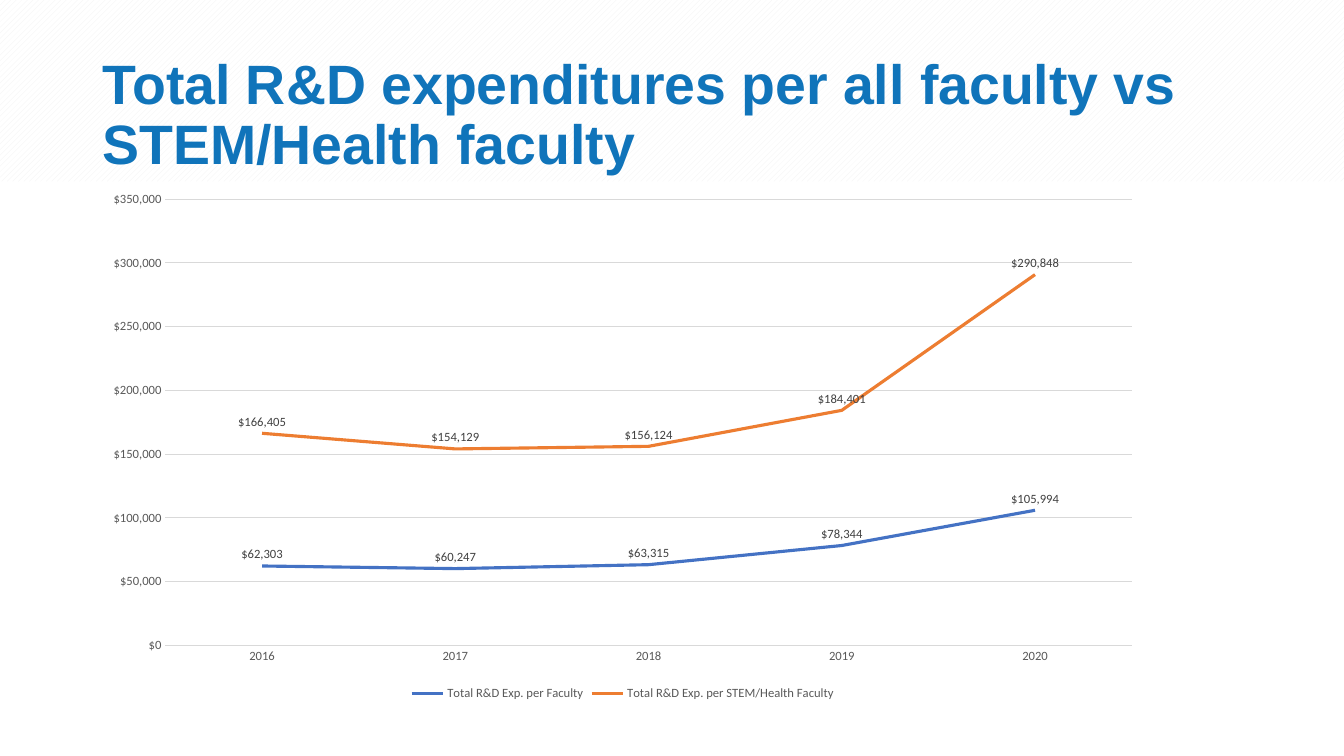
from dataclasses import dataclass

import pptx
import pptx.chart.data
import pptx.dml.color
import pptx.enum.chart
import pptx.enum.dml
import pptx.enum.shapes
import pptx.enum.text
import pptx.util

Pt = pptx.util.Pt
MONEY = '"$"#,##0'
GRAY = "595959"
RULE = "D9D9D9"


@dataclass(frozen=True)
class Trend:
    name: str
    color: str
    values: tuple[int, ...]


YEARS = ("2016", "2017", "2018", "2019", "2020")
TRENDS = (
    Trend("Total R&D Exp. per Faculty", "4472C4",
          (62303, 60247, 63315, 78344, 105994)),
    Trend("Total R&D Exp. per STEM/Health Faculty", "ED7D31",
          (166405, 154129, 156124, 184401, 290848)),
)


def paint(target, color: str) -> None:
    target.rgb = pptx.dml.color.RGBColor.from_string(color)


def style(font, size: float, color: str, name: str = "Calibri", bold: bool = False) -> None:
    font.name = name
    font.size = Pt(size)
    font.bold = bold
    paint(font.color, color)


def rule(line, color: str, width: float) -> None:
    line.width = Pt(width)
    paint(line.color, color)


def add_title(slide) -> None:
    title = slide.shapes.title
    title.left, title.top, title.width, title.height = Pt(66), Pt(28.75), Pt(828), Pt(100.8)
    frame = title.text_frame
    frame.text = "Total R&D expenditures per all faculty vs STEM/Health faculty"
    frame.word_wrap = True
    frame.auto_size = pptx.enum.text.MSO_AUTO_SIZE.NONE
    frame.vertical_anchor = pptx.enum.text.MSO_ANCHOR.BOTTOM
    line = frame.paragraphs[0]
    line.alignment = pptx.enum.text.PP_ALIGN.LEFT
    line.line_spacing = 0.9
    style(line.runs[0].font, 39.6, "1074BA", "Arial", True)


def add_band(slide) -> None:
    band = slide.shapes.add_shape(
        pptx.enum.shapes.MSO_SHAPE.RECTANGLE, 0, 0, Pt(960), Pt(129.6))
    band.shadow.inherit = False
    band.line.fill.background()
    band.fill.patterned()
    band.fill.pattern = pptx.enum.dml.MSO_PATTERN.WIDE_UPWARD_DIAGONAL
    paint(band.fill.fore_color, "F2F2F2")
    paint(band.fill.back_color, "FFFFFF")
    slide.shapes.title.element.addprevious(band.element)


def draw_trend(series, trend: Trend) -> None:
    series.smooth = False
    series.marker.style = pptx.enum.chart.XL_MARKER_STYLE.NONE
    rule(series.format.line, trend.color, 2.25)
    labels = series.data_labels
    labels.show_value = True
    labels.position = pptx.enum.chart.XL_LABEL_POSITION.ABOVE
    labels.number_format = MONEY
    labels.number_format_is_linked = False
    style(labels.font, 9, "404040")


def add_chart(slide) -> None:
    data = pptx.chart.data.CategoryChartData(number_format=MONEY)
    data.categories = YEARS
    for trend in TRENDS:
        data.add_series(trend.name, trend.values)
    chart = slide.shapes.add_chart(
        pptx.enum.chart.XL_CHART_TYPE.LINE,
        Pt(66), Pt(129.6), Pt(757.5), Pt(373.7), data).chart
    style(chart.font, 10, "000000")
    chart.has_title = False
    chart.has_legend = True
    chart.legend.position = pptx.enum.chart.XL_LEGEND_POSITION.BOTTOM
    chart.legend.include_in_layout = False
    style(chart.legend.font, 9, GRAY)

    for axis in (chart.category_axis, chart.value_axis):
        axis.major_tick_mark = pptx.enum.chart.XL_TICK_MARK.NONE
        axis.minor_tick_mark = pptx.enum.chart.XL_TICK_MARK.NONE
        style(axis.tick_labels.font, 9, GRAY)
    rule(chart.category_axis.format.line, RULE, 0.75)

    scale = chart.value_axis
    scale.minimum_scale = 0
    scale.maximum_scale = 350000
    scale.major_unit = 50000
    scale.format.line.fill.background()
    scale.has_major_gridlines = True
    rule(scale.major_gridlines.format.line, RULE, 0.75)
    scale.tick_labels.number_format = MONEY
    scale.tick_labels.number_format_is_linked = False

    plot = chart.plots[0]
    plot.vary_by_categories = False
    for series, trend in zip(plot.series, TRENDS):
        draw_trend(series, trend)


def main() -> None:
    deck = pptx.Presentation()
    deck.slide_width, deck.slide_height = Pt(960), Pt(540)
    slide = deck.slides.add_slide(deck.slide_layouts[5])
    add_title(slide)
    add_band(slide)
    add_chart(slide)
    deck.save("out.pptx")


if __name__ == "__main__":
    main()
